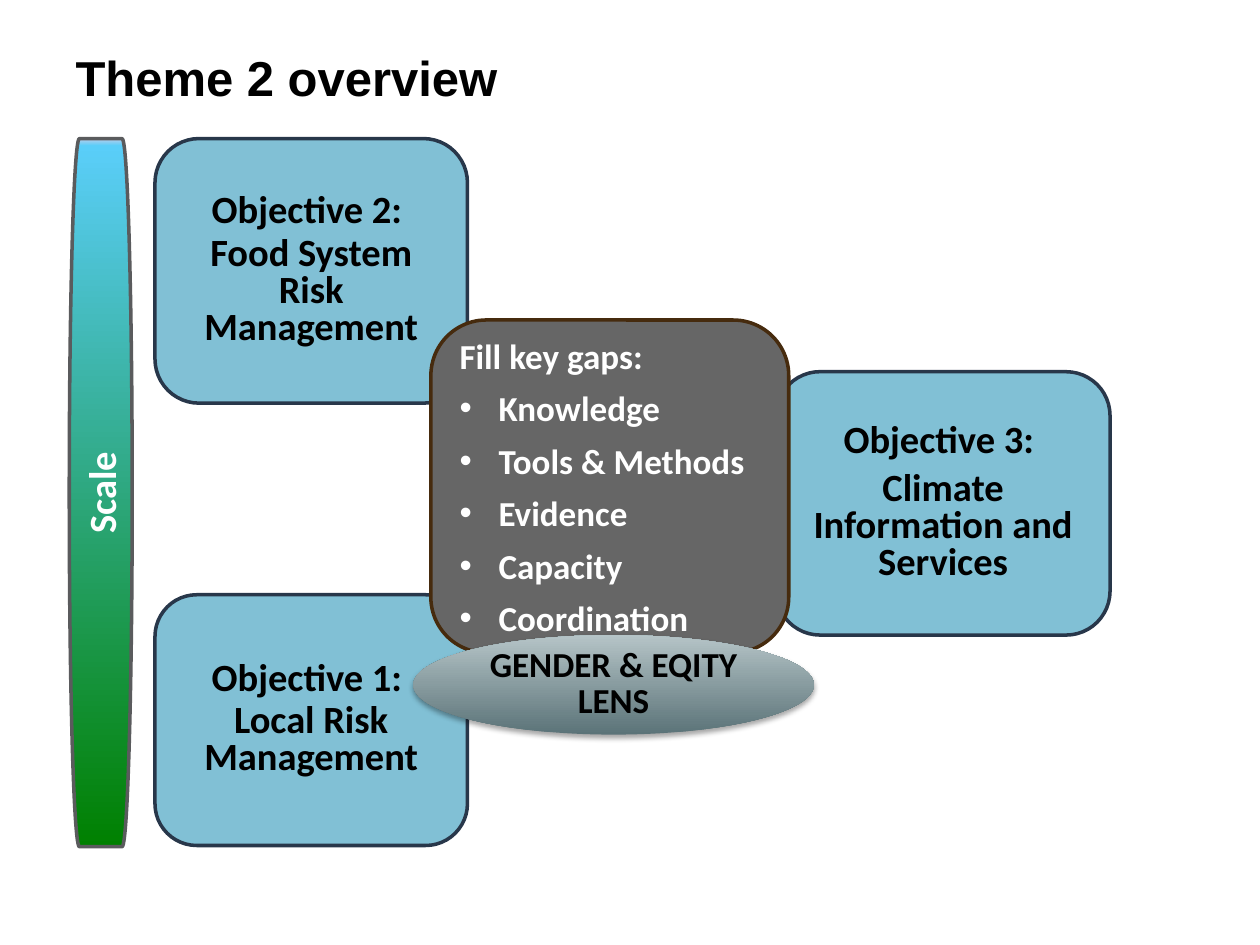
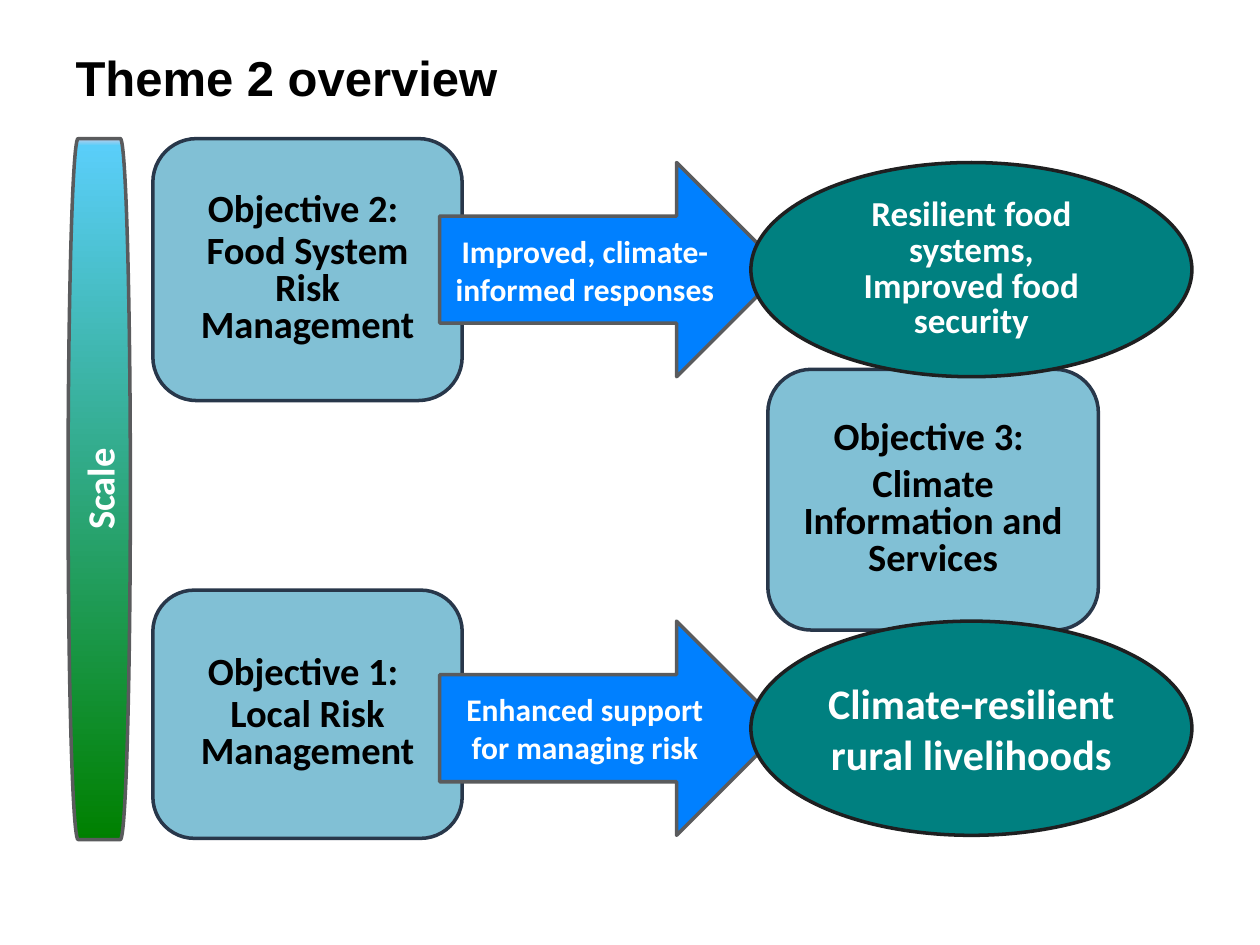
from dataclasses import dataclass

from lxml import etree
from pptx import Presentation
from pptx.dml.color import RGBColor
from pptx.enum import shapes, text
from pptx.oxml import parse_xml
from pptx.oxml.ns import nsdecls, qn
from pptx.util import Inches, Pt

KIND = shapes.MSO_SHAPE
CENTER, LEFT = text.PP_ALIGN.CENTER, text.PP_ALIGN.LEFT


@dataclass(frozen=True)
class Theme:
    title_font: str = "Arial"
    body_font: str = "Calibri"
    dark: str = "000000"
    light: str = "FFFFFF"
    objective: str = "81C0D5"
    objective_line: str = "28374A"
    gaps: str = "666666"
    gaps_line: str = "462B0E"
    arrow: str = "0080FF"
    grey_line: str = "5A5B5D"
    outcome: str = "008080"
    outcome_line: str = "1E1F20"
    scale: tuple = ((0, "008000"), (99, "5ACEF9"), (100, "BDCEEC"))
    lens: tuple = ((0, "5B7378"), (100, "B5C4C7"))
    title_size: int = 28
    outcome_size: int = 24
    objective_size: int = 22
    list_size: int = 20
    arrow_size: int = 18
    line_width: int = 2


THEME = Theme()


@dataclass(frozen=True)
class Box:
    left: float
    top: float
    width: float
    height: float

    def inside(self, left, top, width, height, zoom=1):
        """A box given relative to this one's corner, in zoomed inches."""
        return Box(self.left + left * zoom, self.top + top * zoom, width * zoom, height * zoom)

    def lengths(self):
        return [Inches(v) for v in (self.left, self.top, self.width, self.height)]


def write(frame, lines, size, color=THEME.dark, font=THEME.body_font, align=CENTER,
          spacing=None, after=(), bullets_from=None, anchor=text.MSO_ANCHOR.MIDDLE):
    """Fill a text frame; after holds the space after each line in points."""
    frame.word_wrap = True
    frame.vertical_anchor = anchor
    for index, line in enumerate(lines):
        paragraph = frame.paragraphs[0] if index == 0 else frame.add_paragraph()
        paragraph.alignment = align
        if spacing:
            paragraph.line_spacing = spacing
        if after:
            paragraph.space_after = Pt(after[index])
        if bullets_from is not None and index >= bullets_from:
            add_bullet(paragraph)
        run = paragraph.add_run()
        run.text = line
        run.font.name, run.font.size, run.font.bold = font, Pt(size), True
        run.font.color.rgb = RGBColor.from_string(color)


def add_bullet(paragraph, indent=0.31):
    properties = paragraph._p.get_or_add_pPr()
    properties.set("marL", str(Inches(indent)))
    properties.set("indent", str(-Inches(indent)))
    etree.SubElement(properties, qn("a:buFont")).set("typeface", "Arial")
    etree.SubElement(properties, qn("a:buChar")).set("char", "•")


def fill_upward(shape, stops):
    """Gradient that runs from the bottom of the shape to its top."""
    stop_xml = "".join(f'<a:gs pos="{pos * 1000}"><a:srgbClr val="{color}"/></a:gs>'
                       for pos, color in stops)
    shape._element.spPr.find(qn("a:prstGeom")).addnext(parse_xml(
        f'<a:gradFill {nsdecls("a")} rotWithShape="1"><a:gsLst>{stop_xml}</a:gsLst>'
        '<a:lin ang="16200000" scaled="0"/></a:gradFill>'))


def drop_shadow(shape):
    effects = shape._element.spPr.find(qn("a:effectLst"))
    effects.append(parse_xml(
        f'<a:outerShdw {nsdecls("a")} blurRad="{Pt(3.1)}" dist="{Pt(1.8)}" dir="5400000" '
        'rotWithShape="0"><a:srgbClr val="000000"><a:alpha val="35000"/></a:srgbClr>'
        '</a:outerShdw>'))


def add_shape(slide, kind, box, fill, line=None):
    shape = slide.shapes.add_shape(kind, *box.lengths())
    shape.shadow.inherit = False
    if isinstance(fill, tuple):
        fill_upward(shape, fill)
    else:
        shape.fill.solid()
        shape.fill.fore_color.rgb = RGBColor.from_string(fill)
    if line:
        shape.line.color.rgb = RGBColor.from_string(line)
        shape.line.width = Pt(THEME.line_width)
    else:
        shape.line.fill.background()
    return shape


def add_ellipse(slide, box, fill, line=None):
    ellipse = add_shape(slide, KIND.OVAL, box, fill, line)
    frame = ellipse.text_frame
    frame.margin_left = frame.margin_top = frame.margin_right = frame.margin_bottom = 0
    return ellipse


def add_title(slide, words):
    title = slide.shapes.title
    title.left, title.top, title.width, title.height = Box(0.5, 0.4, 7.04, 1.13).lengths()
    write(title.text_frame, [words], THEME.title_size, font=THEME.title_font,
          align=LEFT, spacing=0.85, anchor=text.MSO_ANCHOR.TOP)
    title.text_frame.auto_size = text.MSO_AUTO_SIZE.SHAPE_TO_FIT_TEXT


def add_objective(slide, box, number, name, gap):
    objective = add_shape(slide, KIND.FLOWCHART_ALTERNATE_PROCESS, box,
                          THEME.objective, THEME.objective_line)
    write(objective.text_frame, [f"Objective {number}: ", name], THEME.objective_size,
          spacing=0.8, after=(gap, 12))


def add_scale(slide, box):
    scale = add_shape(slide, KIND.FLOWCHART_TERMINATOR, box, THEME.scale, THEME.grey_line)
    write(scale.text_frame, ["Scale"], THEME.objective_size, THEME.light)
    scale.text_frame._txBody.bodyPr.set("vert", "vert270")


def add_objectives(slide, area, zoom):
    """The three objectives and the scale bar, common to both slides."""
    def place(*sides):
        return area.inside(*sides, zoom=zoom)

    add_objective(slide, place(0.68, 0, 2.48, 2.1), 2, "Food System Risk Management", 3)
    add_objective(slide, place(0.68, 3.62, 2.48, 1.99), 1, "Local Risk Management", 3)
    add_scale(slide, place(0, 0, 0.5, 5.62))
    add_objective(slide, place(5.61, 1.85, 2.65, 2.09), 3,
                  "Climate Information and Services", 6)


def add_key_gaps(slide, box):
    gaps = add_shape(slide, KIND.FLOWCHART_ALTERNATE_PROCESS, box.inside(0.14, 0, 2.84, 2.64),
                     THEME.gaps, THEME.gaps_line)
    lines = ["Fill key gaps:", "Knowledge", "Tools & Methods", "Evidence", "Capacity",
             "Coordination"]
    write(gaps.text_frame, lines, THEME.list_size, THEME.light, align=LEFT,
          after=[6] * len(lines), bullets_from=1)
    lens = add_ellipse(slide, box.inside(0, 2.5, 3.18, 0.79), THEME.lens)
    drop_shadow(lens)
    write(lens.text_frame, ["GENDER & EQITY LENS"], THEME.list_size, spacing=0.85)


def add_pathway(slide, box, response, outcome, size, spacing=None):
    """An arrow that leads to an outcome ellipse."""
    arrow = add_shape(slide, KIND.RIGHT_ARROW, box.inside(0, 0, 2.73, box.height),
                      THEME.arrow, THEME.grey_line)
    write(arrow.text_frame, [response], THEME.arrow_size, THEME.light)
    result = add_ellipse(slide, box.inside(2.47, 0, 3.5, box.height),
                         THEME.outcome, THEME.outcome_line)
    write(result.text_frame, outcome, size, THEME.light, spacing=spacing)


def add_overview(deck, area, zoom=1):
    slide = deck.slides.add_slide(deck.slide_layouts[5])
    add_title(slide, "Theme 2 overview")
    add_objectives(slide, area, zoom)
    return slide


def main():
    deck = Presentation()
    deck.slide_width, deck.slide_height = Inches(10), Inches(7.5)

    gaps_slide = add_overview(deck, Box(0.55, 1.1, 8.26, 5.62))
    add_key_gaps(gaps_slide, Box(3.28, 2.54, 3.18, 3.29))

    outcomes_slide = add_overview(deck, Box(0.54, 1.1, 8.18, 5.57), zoom=0.99)
    add_pathway(outcomes_slide, Box(3.49, 1.29, 5.97, 1.7),
                "Improved, climate-informed responses",
                ["Resilient food systems,", "Improved food security"],
                THEME.list_size, spacing=0.85)
    add_pathway(outcomes_slide, Box(3.49, 4.93, 5.97, 1.7),
                "Enhanced support for managing risk",
                ["Climate-resilient rural livelihoods"], THEME.outcome_size)
    deck.save("out.pptx")


if __name__ == "__main__":
    main()
